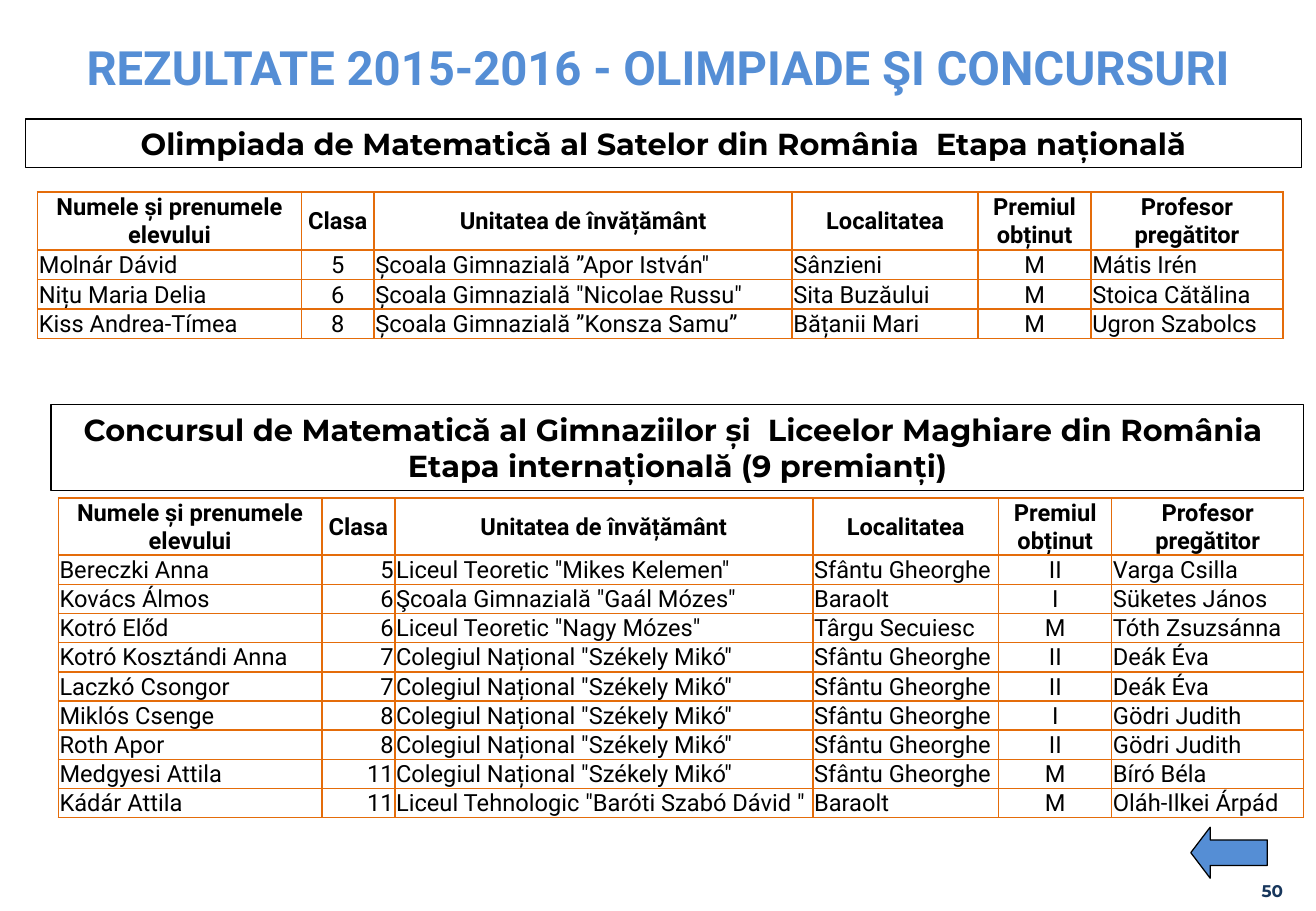
from dataclasses import dataclass

from lxml import etree
from pptx import Presentation
from pptx.dml.color import RGBColor
from pptx.enum.shapes import MSO_SHAPE
from pptx.enum.text import MSO_ANCHOR, MSO_AUTO_SIZE, PP_ALIGN
from pptx.oxml.ns import qn
from pptx.util import Inches, Pt

LEFT, CENTER, RIGHT = PP_ALIGN.LEFT, PP_ALIGN.CENTER, PP_ALIGN.RIGHT
MIDDLE, BOTTOM = MSO_ANCHOR.MIDDLE, MSO_ANCHOR.BOTTOM
RECTANGLE, LEFT_ARROW = MSO_SHAPE.RECTANGLE, MSO_SHAPE.LEFT_ARROW


@dataclass(frozen=True)
class Theme:
    table_font: str = "Roboto"
    heading_font: str = "Montserrat"
    black: str = "000000"
    white: str = "FFFFFF"
    blue: str = "558ED5"
    navy: str = "17365C"
    orange: str = "E46C0A"
    title_size: int = 28
    heading_size: int = 18
    table_size: int = 14
    number_size: int = 10
    outline: float = 0.75
    border: float = 1


THEME = Theme()
TITLE_ONLY_LAYOUT = 5
COLUMN_WIDTHS = (2.17, 0.6, 3.44, 1.53, 0.93, 1.58)
HEADER_HEIGHT = 0.47
ROW_HEIGHT = 0.24

HEADER = ("Numele și prenumele elevului", "Clasa", "Unitatea de învățământ",
          "Localitatea", "Premiul obținut", "Profesor\npregătitor")
OLYMPIAD_ROWS = (
    ("Molnár Dávid", "5", 'Școala Gimnazială ”Apor István"', "Sânzieni", "M", "Mátis Irén"),
    ("Nițu Maria Delia", "6", 'Școala Gimnazială "Nicolae Russu"', "Sita Buzăului", "M",
     "Stoica Cătălina"),
    ("Kiss Andrea-Tímea", "8", "Școala Gimnazială ”Konsza Samu”", "Bățanii Mari", "M",
     "Ugron Szabolcs"),
)
MIKO = 'Colegiul Național "Székely Mikó"'
CITY = "Sfântu Gheorghe"
CONTEST_ROWS = (
    ("Bereczki Anna", "5", 'Liceul Teoretic "Mikes Kelemen"', CITY, "II", "Varga Csilla"),
    ("Kovács Álmos", "6", 'Şcoala Gimnazială "Gaál Mózes"', "Baraolt", "I", "Süketes János"),
    ("Kotró Előd", "6", 'Liceul Teoretic "Nagy Mózes"', "Târgu Secuiesc", "M",
     "Tóth Zsuzsánna"),
    ("Kotró Kosztándi Anna", "7", MIKO, CITY, "II", "Deák Éva"),
    ("Laczkó Csongor", "7", MIKO, CITY, "II", "Deák Éva"),
    ("Miklós Csenge", "8", MIKO, CITY, "I", "Gödri Judith"),
    ("Roth Apor", "8", MIKO, CITY, "II", "Gödri Judith"),
    ("Medgyesi Attila", "11", MIKO, CITY, "M", "Bíró Béla"),
    ("Kádár Attila", "11", 'Liceul Tehnologic "Baróti Szabó Dávid "', "Baraolt", "M",
     "Oláh-Ilkei Árpád"),
)


def write_text(text_frame, text, *, font, size, color=THEME.black, bold=True, align=CENTER):
    """Write one paragraph per line of text, all in the same format."""
    text_frame.text = text
    for paragraph in text_frame.paragraphs:
        paragraph.alignment = align
        paragraph.font.name = font
        paragraph.font.size = Pt(size)
        paragraph.font.bold = bold
        paragraph.font.color.rgb = RGBColor.from_string(color)


def set_title(slide, text):
    title = slide.shapes.title
    title.left, title.top = Inches(0), Inches(0.18)
    title.width, title.height = Inches(10.83), Inches(0.73)
    title.text_frame.auto_size = MSO_AUTO_SIZE.NONE
    title.text_frame.vertical_anchor = MIDDLE
    write_text(title.text_frame, text, font=THEME.table_font,
               size=THEME.title_size, color=THEME.blue)


def add_outlined_shape(slide, kind, left, top, width, height, fill=None):
    shape = slide.shapes.add_shape(kind, Inches(left), Inches(top), Inches(width), Inches(height))
    shape.shadow.inherit = False
    if fill:
        shape.fill.solid()
        shape.fill.fore_color.rgb = RGBColor.from_string(fill)
    else:
        shape.fill.background()
    shape.line.color.rgb = RGBColor.from_string(THEME.black)
    shape.line.width = Pt(THEME.outline)
    return shape


def add_heading(slide, text, left, top, width, height):
    heading = add_outlined_shape(slide, RECTANGLE, left, top, width, height)
    heading.text_frame.word_wrap = True
    heading.text_frame.vertical_anchor = MIDDLE
    write_text(heading.text_frame, text, font=THEME.heading_font, size=THEME.heading_size)


def set_borders(cell):
    properties = cell._tc.get_or_add_tcPr()
    for index, side in enumerate(("a:lnL", "a:lnR", "a:lnT", "a:lnB")):
        line = etree.Element(qn(side), w=str(Pt(THEME.border)))
        fill = etree.SubElement(line, qn("a:solidFill"))
        etree.SubElement(fill, qn("a:srgbClr"), val=THEME.orange)
        properties.insert(index, line)


def format_cell(cell, text, *, header, align, fill):
    cell.margin_left = cell.margin_top = cell.margin_right = Inches(0.01)
    cell.margin_bottom = 0
    cell.vertical_anchor = MIDDLE if header else BOTTOM
    if fill:
        cell.fill.solid()
        cell.fill.fore_color.rgb = RGBColor.from_string(fill)
    else:
        cell.fill.background()
    set_borders(cell)
    write_text(cell.text_frame, text, font=THEME.table_font, size=THEME.table_size,
               bold=header, align=align)


def add_results_table(slide, rows, left, top, class_align, fill=None):
    height = HEADER_HEIGHT + ROW_HEIGHT * len(rows)
    table = slide.shapes.add_table(len(rows) + 1, len(HEADER), Inches(left), Inches(top),
                                   Inches(sum(COLUMN_WIDTHS)), Inches(height)).table
    table.first_row = table.horz_banding = False
    for column, width in zip(table.columns, COLUMN_WIDTHS):
        column.width = Inches(width)
    body_aligns = (LEFT, class_align, LEFT, LEFT, CENTER, LEFT)
    for row_index, values in enumerate((HEADER, *rows)):
        header = row_index == 0
        table.rows[row_index].height = Inches(HEADER_HEIGHT if header else ROW_HEIGHT)
        for column_index, value in enumerate(values):
            format_cell(table.cell(row_index, column_index), value, header=header, fill=fill,
                        align=CENTER if header else body_aligns[column_index])


def add_page_number(slide, number):
    box = slide.shapes.add_textbox(Inches(9.66), Inches(7.02), Inches(0.9), Inches(0.4))
    frame = box.text_frame
    frame.word_wrap = True
    frame.vertical_anchor = BOTTOM
    frame.margin_left = frame.margin_top = frame.margin_right = frame.margin_bottom = 0
    write_text(frame, number, font=THEME.heading_font, size=THEME.number_size,
               color=THEME.navy, align=RIGHT)


def add_back_arrow(slide):
    arrow = add_outlined_shape(slide, LEFT_ARROW, 9.8, 6.81, 0.63, 0.42, fill=THEME.blue)
    arrow.adjustments[1] = 0.38


def main():
    presentation = Presentation()
    presentation.slide_width, presentation.slide_height = Inches(10.83), Inches(7.5)
    slide = presentation.slides.add_slide(presentation.slide_layouts[TITLE_ONLY_LAYOUT])

    set_title(slide, "REZULTATE 2015-2016 - OLIMPIADE ŞI CONCURSURI")
    add_results_table(slide, CONTEST_ROWS, 0.48, 4.1, RIGHT, fill=THEME.white)
    add_page_number(slide, "50")
    add_heading(slide, "Olimpiada de Matematică al Satelor din România  Etapa națională",
                0.21, 0.98, 10.5, 0.4)
    add_back_arrow(slide)
    add_heading(slide, "Concursul de Matematică al Gimnaziilor și  Liceelor Maghiare din România  "
                "Etapa internațională (9 premianți)", 0.42, 3.33, 10.31, 0.71)
    add_results_table(slide, OLYMPIAD_ROWS, 0.31, 1.58, CENTER)

    presentation.save("out.pptx")


if __name__ == "__main__":
    main()
